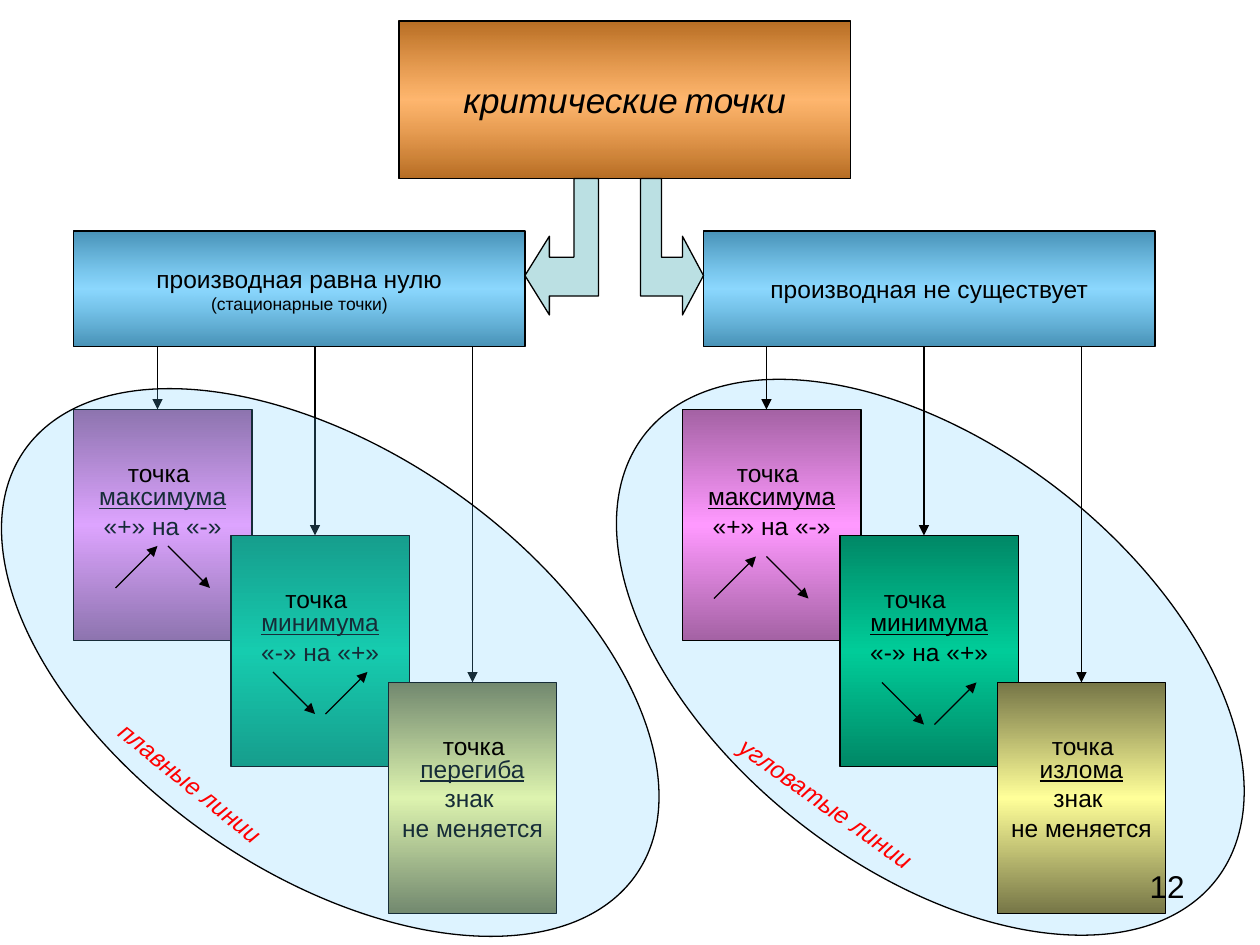
from copy import deepcopy

from lxml import etree
from pptx import Presentation
from pptx.dml.color import RGBColor
from pptx.enum.shapes import MSO_CONNECTOR, MSO_SHAPE
from pptx.enum.text import MSO_ANCHOR, MSO_AUTO_SIZE, PP_ALIGN
from pptx.oxml.ns import qn
from pptx.util import Cm, Pt

RECT, OVAL = MSO_SHAPE.RECTANGLE, MSO_SHAPE.OVAL
LINE = MSO_CONNECTOR.STRAIGHT
MIDDLE, GROW = MSO_ANCHOR.MIDDLE, MSO_AUTO_SIZE.SHAPE_TO_FIT_TEXT
LEFT, CENTER, RIGHT = PP_ALIGN.LEFT, PP_ALIGN.CENTER, PP_ALIGN.RIGHT

UNIT = Cm(2.54) / 12  # the slide is a grid of 120 by 90 units
SHIFT = 58            # from the left branch to the right one
BLACK, RED, SKY = "000000", "FF0000", "66CCFF"
EDGE = 0.75


def grid(*nums):
    return [round(n * UNIT) for n in nums]


def paint(color, code):
    color.rgb = RGBColor.from_string(code)


def fade(root, code, percent):
    """Make every use of a colour below root partly transparent."""
    for node in root.iter(qn("a:srgbClr")):
        if node.get("val") == code:
            etree.SubElement(node, qn("a:alpha"), val=str(percent * 1000))


def edge(shape):
    paint(shape.line.color, BLACK)
    shape.line.width = Pt(EDGE)


def shade(shape, rim, core, alpha=100):
    """Fill with a vertical gradient: rim, core, rim."""
    fill = shape.fill
    fill.gradient()
    fill.gradient_angle = 270
    stops = shape.element.spPr.find(qn("a:gradFill")).find(qn("a:gsLst"))
    stops.insert(1, deepcopy(stops[0]))
    for stop, place, code in zip(fill.gradient_stops, (0, 0.5, 1), (rim, core, rim)):
        stop.position = place
        paint(stop.color, code)
    if alpha < 100:
        fade(stops, core, alpha)


def write(frame, paras, align=CENTER, color=BLACK):
    """Each paragraph is a list of (text, font values) runs."""
    for i, runs in enumerate(paras):
        para = frame.paragraphs[0] if i == 0 else frame.add_paragraph()
        para.alignment = align
        for text, style in runs:
            run = para.add_run()
            run.text = text
            values = {"name": "Arial", "size": Pt(14), **style}
            for key, value in values.items():
                setattr(run.font, key, value)
            paint(run.font.color, color)


def box(slide, at, rim, core, paras, alpha=100):
    shape = slide.shapes.add_shape(RECT, *grid(*at))
    shape.shadow.inherit = False
    shade(shape, rim, core, alpha)
    edge(shape)
    frame = shape.text_frame
    frame.word_wrap = False
    frame.vertical_anchor = MIDDLE
    write(frame, paras)
    return shape


def card(slide, at, rim, core, lines):
    """A box with its first line underlined; short ones sit a line higher."""
    paras = [[(text, {"underline": i == 0})] for i, text in enumerate(lines)]
    shape = box(slide, at, rim, core, paras)
    if len(lines) < 3:
        shape.text_frame.margin_bottom = Cm(0.7)


def arrow(slide, *ends):
    link = slide.shapes.add_connector(LINE, *grid(*ends))
    edge(link)
    props = link.element.spPr
    etree.SubElement(props.find(qn("a:ln")), qn("a:tailEnd"), type="triangle")
    etree.SubElement(props, qn("a:effectLst"))


def oval(slide, at, angle):
    shape = slide.shapes.add_shape(OVAL, *grid(*at))
    shape.shadow.inherit = False
    shape.rotation = angle
    shape.fill.solid()
    paint(shape.fill.fore_color, SKY)
    fade(shape.element.spPr, SKY, 22)
    edge(shape)


def label(slide, at, text, align=LEFT, color=BLACK, angle=0, wrap=False, **style):
    area = slide.shapes.add_textbox(*grid(*at))
    area.rotation = angle
    frame = area.text_frame
    frame.word_wrap = wrap
    frame.auto_size = GROW
    write(frame, [[(text, style)]], align, color)


def bend(slide, tip, neck, inner, outer):
    """A block arrow that drops from the title and turns to one side."""
    points = [(tip, 26.25), (neck, 22.5), (neck, 24.5), (inner, 24.5), (inner, 17),
              (outer, 17), (outer, 28.2), (neck, 28.2), (neck, 30)]
    start, *rest = [grid(*point) for point in points]
    maker = slide.shapes.build_freeform(*start)
    maker.add_line_segments(rest, close=True)
    shape = maker.convert_to_shape()
    shape.shadow.inherit = False
    shape.fill.solid()
    paint(shape.fill.fore_color, "BBE0E3")
    edge(shape)


def branch(slide, dx, rims, last):
    """Three stepped cards and the arrows that lead to them."""
    cards = [
        (7, 39, 17, "FF99FF", ["максимума", "«+» на «-»"]),
        (22, 51, 17, "00CC99", ["минимума", "«-» на «+»"]),
        (37, 65, 16, "FFFF99", [last, "знак ", "не меняется"]),
    ]
    for rim, (x, y, wide, core, lines) in zip(rims, cards):
        card(slide, (x + dx, y, wide, 22), rim, core, lines)
    for x, y, *_ in cards:
        arrow(slide, x + 8 + dx, 33, x + 8 + dx, y)


def trend(slide, x, y, rise):
    """Two slanted arrows: up then down, or down then up."""
    low, high = (y, y - 4) if rise else (y - 4, y)
    arrow(slide, x, low, x + 4, high)
    arrow(slide, x + 5, high, x + 9, low)


def main():
    deck = Presentation()
    deck.slide_width, deck.slide_height = Cm(25.4), Cm(19.05)
    slide = deck.slides.add_slide(deck.slide_layouts[6])

    big = {"size": Pt(20), "italic": True}
    box(slide, (7, 22, 43, 11), "4992B6", SKY,
        [[("производная равна нулю", {})],
         [("(стационарные точки)", {"size": Pt(10)})]], 75)
    box(slide, (38, 2, 43, 15), "B66D24", "FF9933",
        [[("критические", big), (" ", {"italic": True}), ("точки", big)]], 70)
    box(slide, (67, 22, 43, 11), "4992B6", SKY,
        [[("производная не существует", {})]], 75)

    branch(slide, 0, ("995C99", "00916D", "767647"), "перегиба")
    oval(slide, (-4, 43, 70.9, 40.2), 34.7)
    oval(slide, (54.1, 42.5, 69, 40.2), 37.9)
    branch(slide, SHIFT, ("A462A4", "008866", "767647"), "излома")

    for x, y, rise in ((11, 56, True), (26, 68, False),
                       (68, 57, True), (84, 69, False)):
        trend(slide, x, y, rise)

    slant = {"color": RED, "italic": True}
    label(slide, (7.9, 73.9, 23.6, 4.8), "плавные линии", angle=38.8, wrap=True, **slant)
    label(slide, (67, 76, 27.5, 4.8), "угловатые линии", angle=35.4, **slant)
    for x, y in ((11, 43), (26, 55), (41, 69), (69, 43), (83, 55), (99, 69)):
        label(slide, (x, y, 8.3, 4), "точка")

    bend(slide, 50, 52.33, 54.67, 57)
    bend(slide, 67, 65, 63, 61)
    label(slide, (86, 82, 28, 6.2), "12", RIGHT, wrap=True, size=Pt(18))

    deck.save("out.pptx")


if __name__ == "__main__":
    main()
